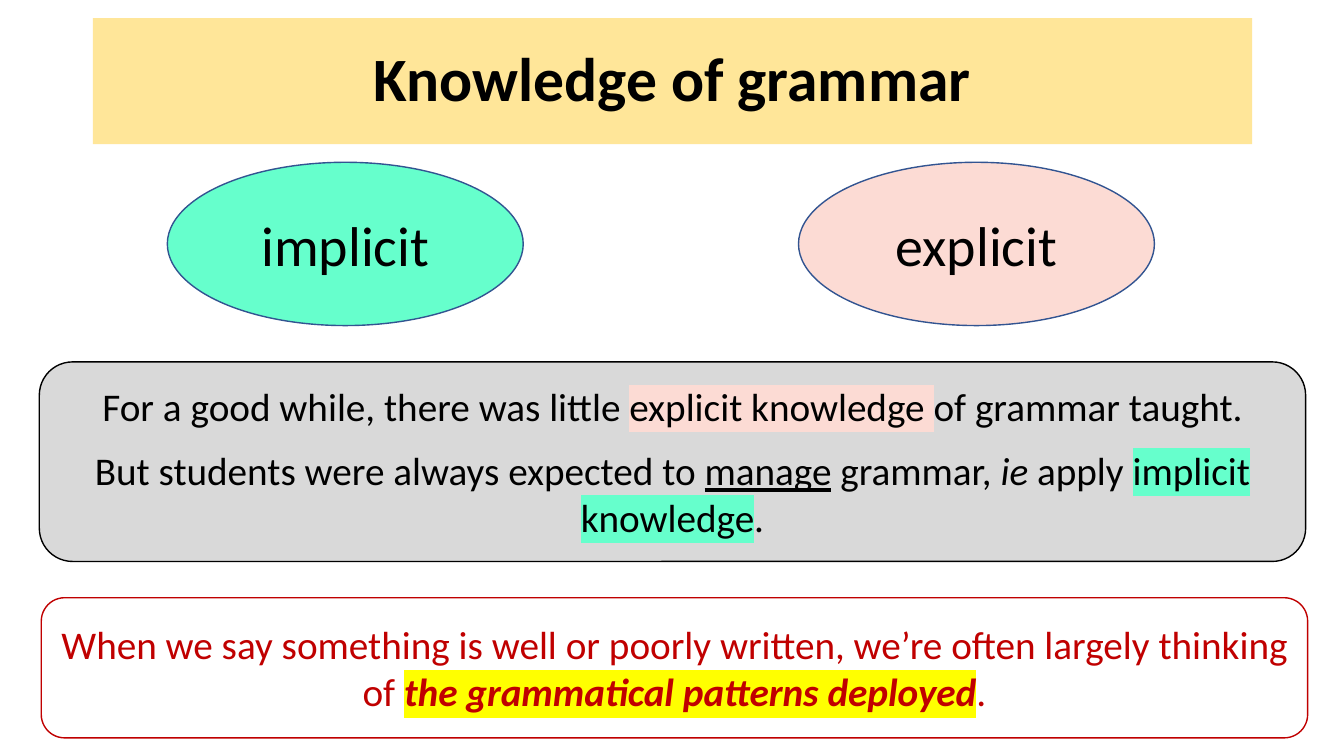
"""Build the slide on implicit and explicit knowledge of grammar."""
from lxml import etree
from pptx import Presentation
from pptx.dml.color import RGBColor
from pptx.enum.shapes import MSO_SHAPE
from pptx.enum.text import MSO_ANCHOR, PP_ALIGN
from pptx.oxml.ns import qn
from pptx.util import Inches, Pt

OVAL, ROUNDED = MSO_SHAPE.OVAL, MSO_SHAPE.ROUNDED_RECTANGLE
MIDDLE, CENTER = MSO_ANCHOR.MIDDLE, PP_ALIGN.CENTER

COLORS = {
    "black": "000000", "white": "FFFFFF", "sand": "FFE699", "mint": "66FFCC",
    "pink": "FCDBD4", "grey": "D9D9D9", "blue": "325491", "red": "C00000",
    "yellow": "FFFF00",
}

TITLE = [[("Knowledge of grammar", {"bold": True})]]
TITLE_BOX = (0.92, 0.18, 11.5, 1.25)

KINDS = [("implicit", "mint"), ("explicit", "pink")]
KIND_LEFT, KIND_STEP, KIND_TOP, KIND_SIZE = 1.66, 6.26, 1.61, (3.53, 1.62)

HISTORY = [
    [("For a good while, there was little ", {}),
     ("explicit knowledge ", {"highlight": "pink"}),
     ("of grammar taught.", {})],
    [("But students were always expected to ", {}),
     ("manage", {"underline": True}),
     (" grammar, ", {}),
     ("ie", {"italic": True}),
     (" apply ", {}),
     ("implicit knowledge", {"highlight": "mint"}),
     (".", {})],
]
CONCLUSION = [
    [("When we say something is well or poorly written, "
      "we’re often largely thinking of ", {}),
     ("the grammatical patterns deployed",
      {"bold": True, "italic": True, "highlight": "yellow"}),
     (".", {})],
]
PANELS = [
    (HISTORY, (0.39, 3.59, 12.56, 1.98), "grey", "black", "black"),
    (CONCLUSION, (0.41, 5.93, 12.56, 1.39), "white", "red", "red"),
]


def rgb(color):
    return RGBColor.from_string(COLORS[color])


def highlight(run, color):
    mark = etree.Element(qn("a:highlight"))
    etree.SubElement(mark, qn("a:srgbClr"), val=COLORS[color])
    run._r.get_or_add_rPr().find(qn("a:solidFill")).addnext(mark)


def write(shape, paragraphs, size, color, **spacing):
    frame = shape.text_frame
    frame.word_wrap = True
    frame.vertical_anchor = MIDDLE
    for index, pieces in enumerate(paragraphs):
        paragraph = frame.add_paragraph() if index else frame.paragraphs[0]
        paragraph.alignment = CENTER
        for name, value in spacing.items():
            setattr(paragraph, name, value)
        for text, formats in pieces:
            run = paragraph.add_run()
            run.text = text
            run.font.color.rgb = rgb(color)
            for name, value in {"name": "Calibri", "size": Pt(size), **formats}.items():
                if name == "highlight":
                    highlight(run, value)
                else:
                    setattr(run.font, name, value)


def fill(shape, color):
    shape.fill.solid()
    shape.fill.fore_color.rgb = rgb(color)


def add_panel(slide, preset, box, background, outline):
    shape = slide.shapes.add_shape(preset, *map(Inches, box))
    shape.shadow.inherit = False
    fill(shape, background)
    shape.line.color.rgb = rgb(outline)
    shape.line.width = Pt(1)
    return shape


def main():
    deck = Presentation()
    deck.slide_width, deck.slide_height = Inches(13.33), Inches(7.5)
    slide = deck.slides.add_slide(deck.slide_layouts[5])

    title = slide.shapes.title
    title.left, title.top, title.width, title.height = map(Inches, TITLE_BOX)
    fill(title, "sand")
    write(title, TITLE, 44, "black", line_spacing=0.9)

    for index, (kind, background) in enumerate(KINDS):
        box = (KIND_LEFT + index * KIND_STEP, KIND_TOP, *KIND_SIZE)
        oval = add_panel(slide, OVAL, box, background, "blue")
        write(oval, [[(kind, {})]], 40, "black")

    for paragraphs, box, background, outline, text_color in PANELS:
        panel = add_panel(slide, ROUNDED, box, background, outline)
        write(panel, paragraphs, 28, text_color, space_after=Pt(12))

    deck.save("out.pptx")


if __name__ == "__main__":
    main()
